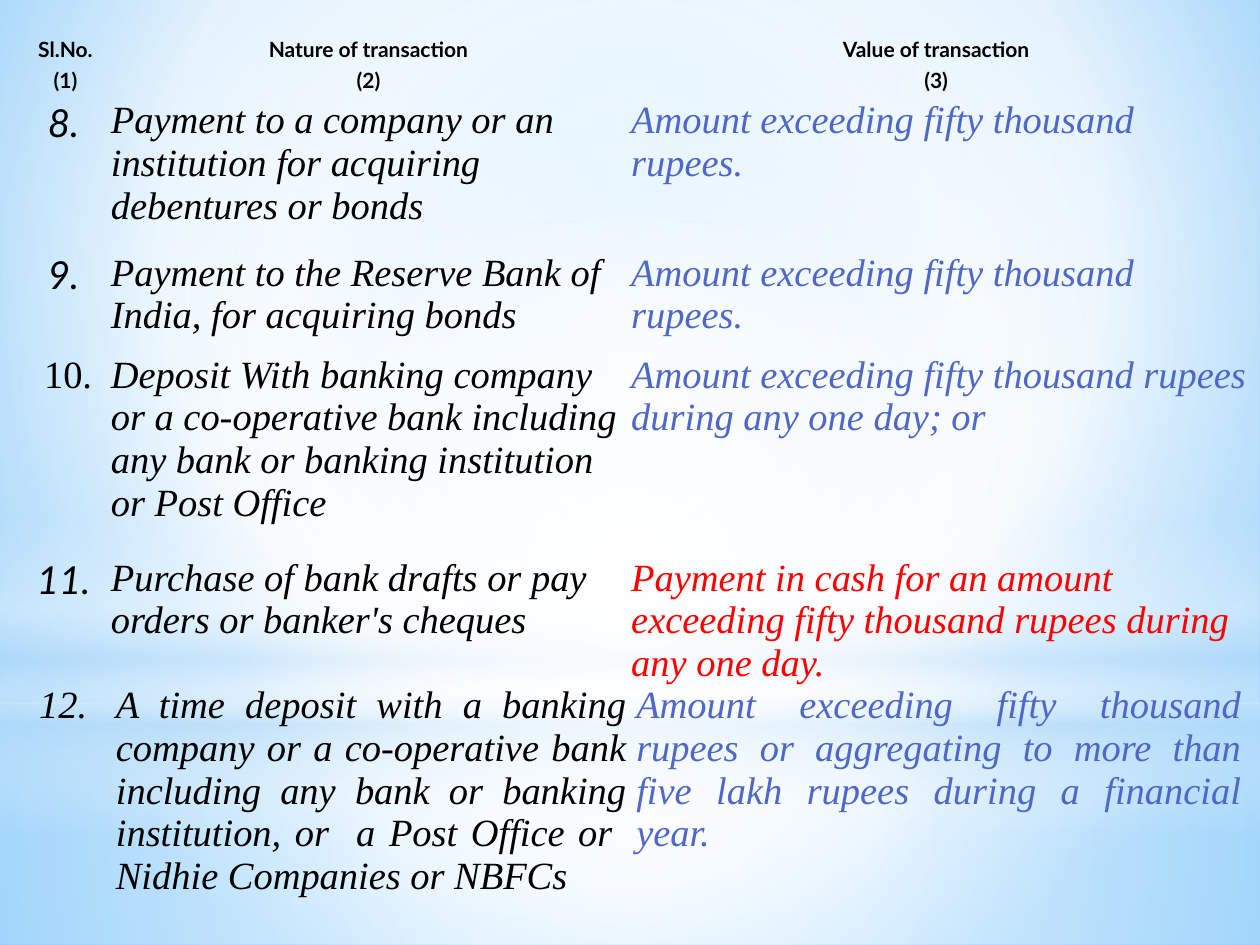
import pptx
import pptx.util
import pptx.dml.color
import pptx.enum.shapes
import pptx.enum.text
import pptx.oxml.ns
from dataclasses import dataclass
from lxml import etree

Shape = pptx.enum.shapes.MSO_SHAPE
Align = pptx.enum.text.PP_ALIGN
qn = pptx.oxml.ns.qn


@dataclass
class Theme:
    ink: str = "000000"
    blue: str = "4E67C8"
    red: str = "FF0000"
    white: str = "FFFFFF"
    pale: str = "B4DCFA"
    sky: str = "9ED5FF"
    deep: str = "5BB9FF"
    sans: str = "Lato"
    serif: str = "Times New Roman"
    small: int = 12
    large: int = 22
    plain: str = "{2D5ABB26-0587-4C30-8999-92F81FD0307C}"  # table style without lines


def write(frame, text, font, size, color, bold=False, italic=False,
          align=Align.LEFT, after=0):
    """Put one formatted paragraph in a text frame."""
    para = frame.paragraphs[0]
    para.alignment = align
    para.space_after = pptx.util.Pt(after)
    run = para.add_run()
    run.text = text
    run.font.name = font
    run.font.size = pptx.util.Pt(size)
    run.font.bold = bold
    run.font.italic = italic
    run.font.color.rgb = pptx.dml.color.RGBColor.from_string(color)


def blend(grad, stops, centre=None):
    """Fill a gradFill with (position, colour, opacity) stops.

    With a centre the blend is round, otherwise it runs downwards.
    """
    for child in list(grad):
        grad.remove(child)
    group = etree.SubElement(grad, qn("a:gsLst"))
    for pos, color, alpha in stops:
        stop = etree.SubElement(group, qn("a:gs"), pos=str(pos * 1000))
        tint = etree.SubElement(stop, qn("a:srgbClr"), val=color)
        if alpha < 100:
            etree.SubElement(tint, qn("a:alpha"), val=str(alpha * 1000))
    if centre:
        ring = etree.SubElement(grad, qn("a:path"))
        ring.set("path", "circle")
        sides = {side: str(v * 1000) for side, v in zip("ltrb", centre)}
        etree.SubElement(ring, qn("a:fillToRect"), sides)
    else:
        etree.SubElement(grad, qn("a:lin"), ang="5400000", scaled="0")


class Deck:
    """Holds the theme and the current slide; lengths are cells of a 100 x 75 grid."""

    def __init__(self, theme):
        self.theme = theme
        self.file = pptx.Presentation()
        self.file.slide_width = pptx.util.Inches(10)
        self.file.slide_height = pptx.util.Inches(7.5)
        self.unit = self.file.slide_width / 100
        self.slide = self.file.slides.add_slide(self.file.slide_layouts[6])

    def span(self, *cells):
        return [round(c * self.unit) for c in cells]

    def ground(self, stops, centre):
        self.slide.background.fill.gradient()
        blend(self.slide._element.xpath(".//p:bg//a:gradFill")[0], stops, centre)

    def glow(self, kind, box, stops, centre=None):
        shape = self.slide.shapes.add_shape(kind, *self.span(*box))
        shape.shadow.inherit = False
        shape.line.fill.background()
        shape.fill.gradient()
        blend(shape._element.xpath("./p:spPr/a:gradFill")[0], stops, centre)

    def table(self, left, top, cols, rows):
        box = self.span(left, top, sum(cols), sum(rows))
        frame = self.slide.shapes.add_table(len(rows), len(cols), *box)
        grid = frame.table
        grid.first_row = grid.horz_banding = False
        frame._element.xpath(".//a:tableStyleId")[0].text = self.theme.plain
        for col, wide in zip(grid.columns, self.span(*cols)):
            col.width = wide
        for row, high in zip(grid.rows, self.span(*rows)):
            row.height = high
        return grid

    def cell(self, cell, text, inset=0, **form):
        cell.fill.background()
        cell.margin_top = cell.margin_bottom = 0
        cell.margin_left = cell.margin_right = self.span(inset)[0]
        write(cell.text_frame, text, **form)


def main():
    t = Theme()
    deck = Deck(t)

    # Backdrop: sky, soft halves, horizon band and central light
    mid = (50, 50, 50, 50)
    deck.ground([(0, t.sky, 100), (60, t.white, 100), (100, t.deep, 100)],
                (20, 10, 20, 60))
    deck.glow(Shape.RECTANGLE, (0, 55.8, 100, 19.2),
              [(0, t.white, 91), (37, t.white, 76), (100, t.pale, 79)], mid)
    deck.glow(Shape.RECTANGLE, (0, 0, 100, 55.8),
              [(0, t.white, 89), (48, t.white, 62), (100, t.pale, 79)], mid)
    deck.glow(Shape.RECTANGLE, (0, 41.2, 100, 25),
              [(0, t.white, 0), (29, t.white, 30), (45, t.pale, 40),
               (55, t.white, 26), (65, t.pale, 60), (100, t.white, 0)])
    deck.glow(Shape.OVAL, (0, 17.5, 100, 55.8),
              [(0, t.white, 100), (56, t.white, 0)], mid)

    # Table heading
    grid = deck.table(2, 2.9, cols=(6.8, 41.3, 48.8),
                      rows=(2.5, 2.5, 12.1, 8.1, 16.1, 8.6, 20.1))
    heads = [("Sl.No. ", "Nature of transaction ", "Value of transaction "),
             ("(1) ", "(2) ", "(3) ")]
    for r, line in enumerate(heads):
        for c, text in enumerate(line):
            deck.cell(grid.cell(r, c), text, font=t.sans, size=t.small,
                      color=t.ink, bold=True, align=Align.CENTER)

    # Transactions: number, nature, value, then what differs in each column
    fifty = "Amount exceeding fifty thousand rupees."
    just = dict(align=Align.JUSTIFY)
    last = dict(just, after=4, inset=0.4)
    items = [
        ("8. ", "Payment to a company or an institution for acquiring "
         "debentures or bonds", fifty, {}, {}, {}),
        ("9. ", "Payment to the Reserve Bank of India, for acquiring bonds",
         fifty, {}, {}, {}),
        ("10.", "Deposit With banking company or a co-operative bank including "
         "any bank or banking institution or Post Office",
         "Amount exceeding fifty thousand rupees during any one day; or ",
         dict(font=t.serif, italic=False), {}, just),
        ("11. ", "Purchase of bank drafts or pay orders or banker's cheques",
         "Payment in cash for an amount exceeding fifty thousand rupees "
         "during any one day.", {}, {}, dict(color=t.red)),
        ("12. ", "A time deposit with a banking company or a co-operative bank "
         "including any bank or banking institution, or  a Post Office or  "
         "Nidhie Companies or NBFCs",
         "Amount exceeding fifty thousand rupees or aggregating to more than "
         "five lakh rupees during a financial year. ",
         dict(font=t.serif, after=4), last, last),
    ]
    base = dict(font=t.serif, size=t.large, color=t.ink, italic=True)
    forms = [dict(base, font=t.sans, align=Align.CENTER), base,
             dict(base, color=t.blue)]
    for r, item in enumerate(items, len(heads)):
        for c, form in enumerate(forms):
            deck.cell(grid.cell(r, c), item[c], **{**form, **item[c + 3]})

    deck.file.save("out.pptx")


if __name__ == "__main__":
    main()
